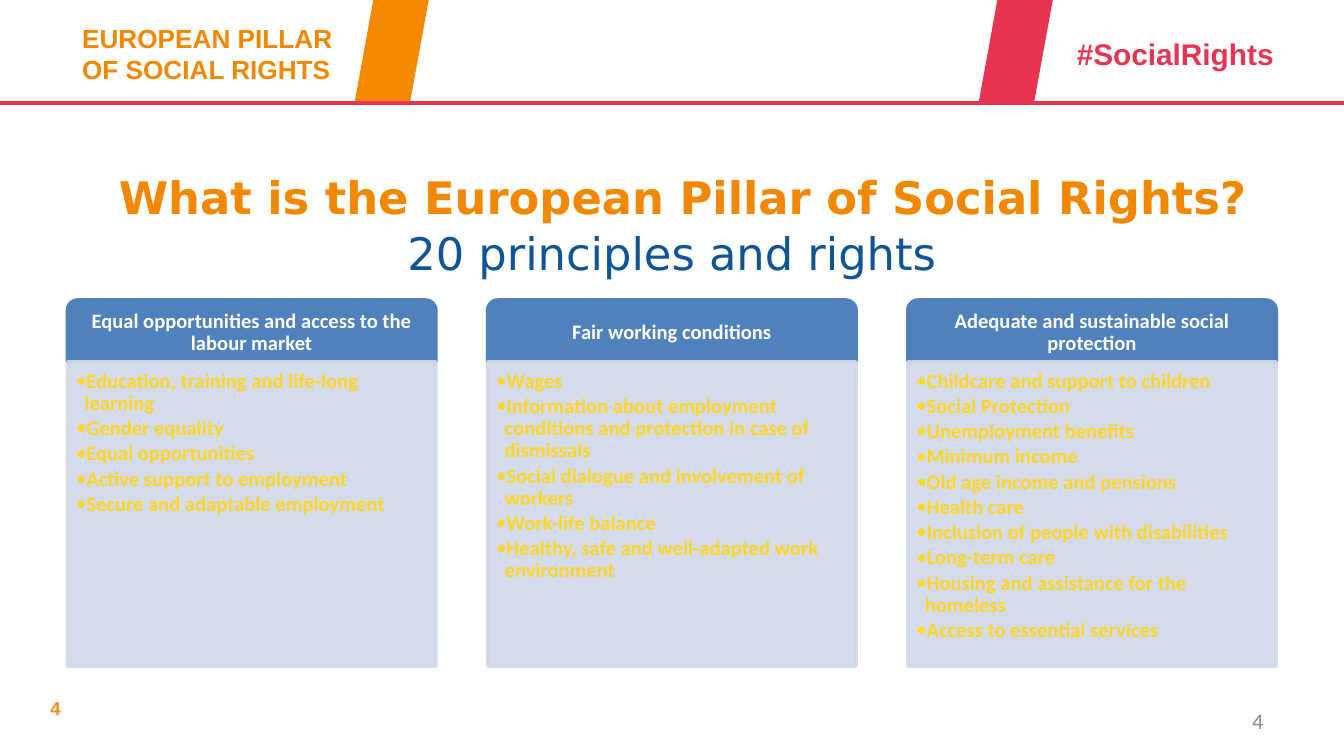
import pptx
import pptx.util
import pptx.dml.color
import pptx.enum.shapes
import pptx.enum.text
import pptx.oxml.ns
import lxml.etree

Pt = pptx.util.Pt
qn = pptx.oxml.ns.qn
Kind = pptx.enum.shapes.MSO_SHAPE
Align = pptx.enum.text.PP_ALIGN
Anchor = pptx.enum.text.MSO_ANCHOR

ORANGE, RED = "F18800", "E73452"
TITLE = "What is the European Pillar of Social Rights?"
LABELS = [
    (["4"], (19.9, 370, 157, 19.4), "Arial", 10, "F68B20", True, Align.LEFT, Anchor.TOP),
    (["EUROPEAN PILLAR ", "OF SOCIAL RIGHTS"], (36.9, 8.3, 182.9, 41),
     "Arial", 14, ORANGE, True, Align.LEFT, Anchor.TOP),
    (["#SocialRights"], (569.8, 15.5, 124.6, 26.6),
     "Arial", 16, RED, True, Align.LEFT, Anchor.TOP),
    (["20 principles and rights"], (25.5, 117.4, 668.9, 36),
     "DejaVu Sans", 24, "0F5494", False, Align.CENTER, Anchor.TOP),
    (["4"], (516.2, 375.1, 167.8, 21.6),
     "Calibri", 12, "8C8C8C", False, Align.RIGHT, Anchor.MIDDLE),
]
BANDS = [(190.1, "F68800"), (524.4, RED)]
PANELS = [
    ("Equal opportunities and access to the labour market", [
        "Education, training and life-long learning",
        "Gender equality",
        "Equal opportunities",
        "Active support to employment",
        "Secure and adaptable employment",
    ]),
    ("Fair working conditions", [
        "Wages",
        "Information about employment conditions and protection in case of dismissals",
        "Social dialogue and involvement of workers",
        "Work-life balance",
        "Healthy, safe and well-adapted work environment",
    ]),
    ("Adequate and sustainable social protection", [
        "Childcare and support to children",
        "Social Protection",
        "Unemployment benefits",
        "Minimum income",
        "Old age income and pensions",
        "Health care",
        "Inclusion of people with disabilities",
        "Long-term care",
        "Housing and assistance for the homeless",
        "Access to essential services",
    ]),
]
LEFT, PITCH, WIDTH = 36.2, 225.1, 197.3
TOP, HEAD, BODY = 160.8, 33.1, 162.9


def paint(form, color):
    form.rgb = pptx.dml.color.RGBColor.from_string(color)


def write(para, text, face, size, color, bold):
    run = para.add_run()
    run.text = text
    run.font.name = face
    run.font.size = Pt(size)
    run.font.bold = bold
    paint(run.font.color, color)


def setup(frame, anchor, pads):
    frame.word_wrap = True
    frame.vertical_anchor = anchor
    frame.margin_left, frame.margin_top, frame.margin_right, frame.margin_bottom = map(Pt, pads)


def label(slide, lines, box, face, size, color, bold, align, anchor):
    frame = slide.shapes.add_textbox(*map(Pt, box)).text_frame
    setup(frame, anchor, (7.2, 3.6, 7.2, 3.6))
    para = frame.paragraphs[0]
    para.alignment = align
    for i, line in enumerate(lines):
        if i:
            para.add_line_break()
        write(para, line, face, size, color, bold)


def block(slide, kind, box, color, edge=0):
    shape = slide.shapes.add_shape(kind, *map(Pt, box))
    shape.shadow.inherit = False
    shape.fill.solid()
    paint(shape.fill.fore_color, color)
    if edge:
        paint(shape.line.color, color)
        shape.line.width = Pt(edge)
    else:
        shape.line.fill.background()
    return shape


def bullet(para):
    para.level = 1
    props = para._p.get_or_add_pPr()
    props.set("marL", str(Pt(4.5)))
    props.set("indent", str(Pt(-4.5)))
    for tag, key, value in (
        ("a:buSzPct", "val", "100000"),
        ("a:buFont", "typeface", "Calibri"),
        ("a:buChar", "char", "•"),
    ):
        lxml.etree.SubElement(props, qn(tag)).set(key, value)


def panel(slide, left, head, items):
    bar = block(slide, Kind.ROUND_2_SAME_RECTANGLE, (left, TOP, WIDTH, HEAD), "4F81BD", 2)
    setup(bar.text_frame, Anchor.MIDDLE, (6.2, 3.6, 6.2, 3.6))
    para = bar.text_frame.paragraphs[0]
    para.alignment = Align.CENTER
    para.line_spacing = 0.9
    write(para, head, "Calibri", 11, "FFFFFF", True)

    area = block(slide, Kind.RECTANGLE, (left, TOP + HEAD, WIDTH, BODY), "D0D8E8", 2)
    for tint in area._element.spPr.iter(qn("a:srgbClr")):
        lxml.etree.SubElement(tint, qn("a:alpha")).set("val", "90000")
    frame = area.text_frame
    setup(frame, Anchor.TOP, (4.6, 4.6, 6.2, 7))
    for i, item in enumerate(items):
        para = frame.add_paragraph() if i else frame.paragraphs[0]
        bullet(para)
        para.font.size = Pt(11)
        para.alignment = Align.LEFT
        para.line_spacing = 0.9
        para.space_after = Pt(1.65)
        write(para, item, "Calibri", 11, "FFD624", True)


def main():
    deck = pptx.Presentation()
    deck.slide_width, deck.slide_height = Pt(720), Pt(405)
    slide = deck.slides.add_slide(deck.slide_layouts[5])

    title = slide.shapes.title
    title.left, title.top, title.width, title.height = map(Pt, (11.5, 77.8, 708.5, 55.4))
    setup(title.text_frame, Anchor.MIDDLE, (7.2, 3.6, 7.2, 3.6))
    para = title.text_frame.paragraphs[0]
    para.alignment = Align.CENTER
    write(para, TITLE, "DejaVu Sans", 24, ORANGE, True)

    rule = slide.shapes.add_connector(
        pptx.enum.shapes.MSO_CONNECTOR.STRAIGHT, Pt(0), Pt(55.2), Pt(720), Pt(55.2))
    paint(rule.line.color, RED)
    rule.line.width = Pt(2.25)
    lxml.etree.SubElement(rule._element.spPr, qn("a:effectLst"))

    for left, color in BANDS:
        block(slide, Kind.PARALLELOGRAM, (left, 0, 39.6, 54.2), color)
    for i, (head, items) in enumerate(PANELS):
        panel(slide, LEFT + i * PITCH, head, items)
    for entry in LABELS:
        label(slide, *entry)

    deck.save("out.pptx")


if __name__ == "__main__":
    main()
